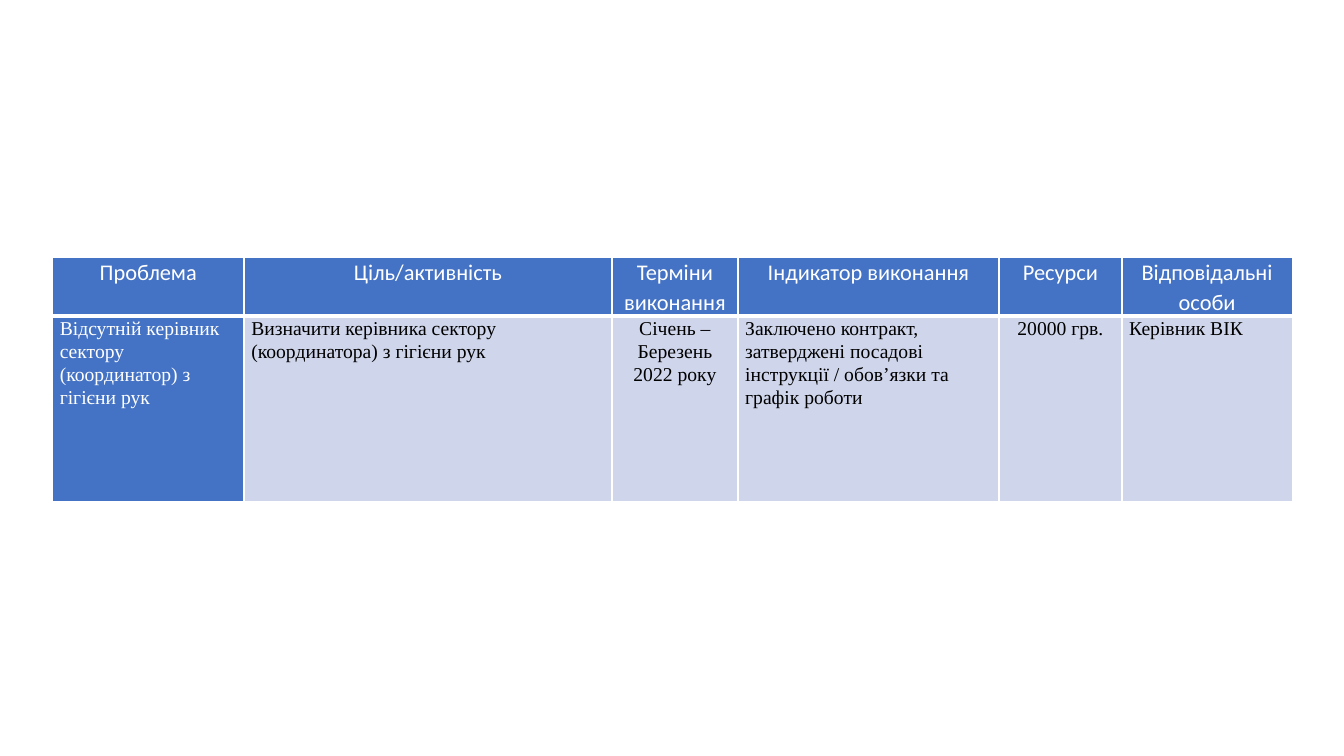
from dataclasses import dataclass

from lxml.etree import SubElement
from pptx import Presentation
from pptx.dml.color import RGBColor
from pptx.enum.text import PP_ALIGN
from pptx.oxml.ns import qn
from pptx.util import Pt


@dataclass(frozen=True)
class Theme:
    accent: str = "4472C4"
    tint: str = "CFD5EA"
    light: str = "FFFFFF"
    dark: str = "000000"
    header_font: str = "Calibri"
    body_font: str = "Times New Roman"
    header_size: float = 16
    body_size: float = 14
    rule: float = 1
    header_rule: float = 3


THEME = Theme()
LEFT, CENTER, JUSTIFY = PP_ALIGN.LEFT, PP_ALIGN.CENTER, PP_ALIGN.JUSTIFY

# Column heading, width, activity text, activity alignment
PLAN = [
    ("Проблема", 136.8, "Відсутній керівник сектору (координатор) з гігієни рук", LEFT),
    ("Ціль/активність", 262.8, "Визначити керівника сектору (координатора) з гігієни рук", LEFT),
    ("Терміни виконання", 90, "Січень – Березень 2022 року", CENTER),
    ("Індикатор виконання", 186.5,
     "Заключено контракт, затверджені посадові інструкції / обов’язки та графік роботи", LEFT),
    ("Ресурси", 87.8, "20000 грв.", CENTER),
    ("Відповідальні особи", 121.7, "Керівник ВІК", JUSTIFY),
]


def add_borders(cell, bottom_width):
    """Draw the white rules; they must precede the fill in the cell properties."""
    properties = cell._tc.get_or_add_tcPr()
    widths = {"L": THEME.rule, "R": THEME.rule, "T": THEME.rule, "B": bottom_width}
    for position, (side, width) in enumerate(widths.items()):
        rule = SubElement(properties, qn(f"a:ln{side}"), w=str(Pt(width)))
        color = SubElement(SubElement(rule, qn("a:solidFill")), qn("a:srgbClr"))
        color.set("val", THEME.light)
        properties.insert(position, rule)


def fill_cell(cell, text, alignment, font_name, size, color, fill, bottom_width):
    cell.fill.solid()
    cell.fill.fore_color.rgb = RGBColor.from_string(fill)
    add_borders(cell, bottom_width)
    cell.margin_left = cell.margin_right = Pt(5.2)
    cell.margin_top = cell.margin_bottom = Pt(0)
    paragraph = cell.text_frame.paragraphs[0]
    paragraph.alignment = alignment
    paragraph.line_spacing = 1.07
    paragraph.space_after = Pt(8)
    run = paragraph.add_run()
    run.text = text
    run.font.name = font_name
    run.font.size = Pt(size)
    run.font.bold = False
    run.font.color.rgb = RGBColor.from_string(color)


def add_plan(slide, left, top, width, height):
    """Place the action plan, sharing the width among its columns."""
    plan = slide.shapes.add_table(2, len(PLAN), Pt(left), Pt(top), Pt(width), Pt(height)).table
    plan.horz_banding = False
    header_height = 41
    plan.rows[0].height = Pt(header_height)
    plan.rows[1].height = Pt(height - header_height)
    scale = width / sum(column[1] for column in PLAN)

    for index, (heading, column_width, activity, alignment) in enumerate(PLAN):
        plan.columns[index].width = Pt(column_width * scale)
        # Heading
        fill_cell(plan.cell(0, index), heading, CENTER, THEME.header_font,
                  THEME.header_size, THEME.light, THEME.accent, THEME.header_rule)
        # Activity; the problem column keeps the heading colours
        is_problem = index == 0
        fill_cell(plan.cell(1, index), activity, alignment, THEME.body_font, THEME.body_size,
                  THEME.light if is_problem else THEME.dark,
                  THEME.accent if is_problem else THEME.tint, THEME.rule)


def main():
    presentation = Presentation()
    presentation.slide_width = Pt(960)
    presentation.slide_height = Pt(540)
    slide = presentation.slides.add_slide(presentation.slide_layouts[6])
    add_plan(slide, left=37.5, top=183.9, width=885.6, height=173.5)
    presentation.save("out.pptx")


if __name__ == "__main__":
    main()
